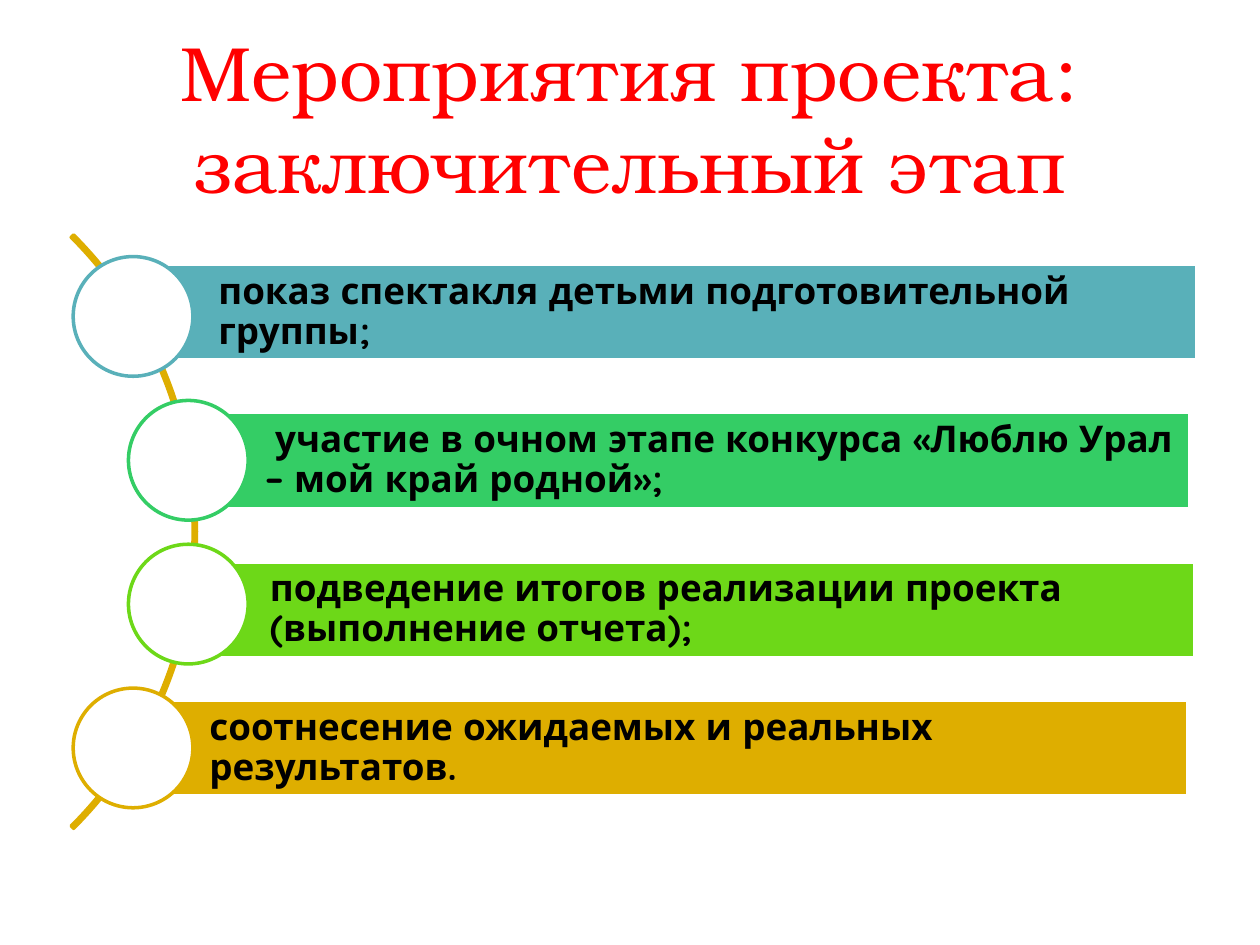
from pptx import Presentation
from pptx.dml.color import RGBColor
from pptx.enum.shapes import MSO_SHAPE as Shape
from pptx.enum.text import MSO_ANCHOR as Anchor, PP_ALIGN as Align
from pptx.util import Pt

TITLE = "Мероприятия проекта:\vзаключительный этап"
STAGES = [
    ("показ спектакля детьми подготовительной группы;", "59B0B9", 81.4, 151.2, 602.6, 41.8),
    (" участие в очном этапе конкурса «Люблю Урал – мой край родной»;", "34CD65", 108, 235.8, 571.7, 73.4),
    ("подведение итогов реализации проекта (выполнение отчета);", "6DD818", 110.9, 321.2, 571.7, 73.4),
    ("соотнесение ожидаемых и реальных результатов.", "DEAE00", 76.3, 400.3, 602.6, 41.8),
]
BAR_HEIGHT = 54.7
CIRCLE_SIZE = 68.4
CIRCLE_TOP = 146.6
CIRCLE_STEP = 82.2


def color(value):
    return RGBColor.from_string(value)


def add_outlined(slide, kind, box, fill, line):
    shape = slide.shapes.add_shape(kind, *map(Pt, box))
    shape.shadow.inherit = False
    if fill:
        shape.fill.solid()
        shape.fill.fore_color.rgb = color(fill)
    else:
        shape.fill.background()
    shape.line.color.rgb = color(line)
    shape.line.width = Pt(2)
    return shape


def write(frame, text, font_name, size, text_color, bold, align):
    frame.word_wrap = True
    frame.vertical_anchor = Anchor.MIDDLE
    frame.text = text
    paragraph = frame.paragraphs[0]
    paragraph.alignment = align
    font = paragraph.font
    font.name, font.size, font.bold = font_name, Pt(size), bold
    font.color.rgb = color(text_color)
    return paragraph


def main():
    deck = Presentation()
    deck.slide_width, deck.slide_height = Pt(720), Pt(540)
    slide = deck.slides.add_slide(deck.slide_layouts[6])

    title = slide.shapes.add_textbox(Pt(36), Pt(21.6), Pt(648), Pt(90))
    write(title.text_frame, TITLE, "TeX Gyre Bonum", 44, "FF0000", False, Align.CENTER)

    arc = add_outlined(slide, Shape.BLOCK_ARC, (-367.2, 64.1, 479.5, 479.5), None, "DEAE00")
    for index, value in enumerate((189, 27, 0.004)):
        arc.adjustments[index] = value

    for index, (text, accent, left, top, width, circle_left) in enumerate(STAGES):
        bar = add_outlined(slide, Shape.RECTANGLE, (left, top, width, BAR_HEIGHT), accent, "FFFFFF")
        frame = bar.text_frame
        frame.margin_left = Pt(43.4)
        frame.margin_right = frame.margin_top = frame.margin_bottom = Pt(4.2)
        paragraph = write(frame, text, "Quicksand", 21, "000000", True, Align.LEFT)
        paragraph.line_spacing = 0.9

        circle_top = CIRCLE_TOP + index * CIRCLE_STEP
        add_outlined(slide, Shape.OVAL, (circle_left, circle_top, CIRCLE_SIZE, CIRCLE_SIZE), "FFFFFF", accent)

    deck.save("out.pptx")


if __name__ == "__main__":
    main()
